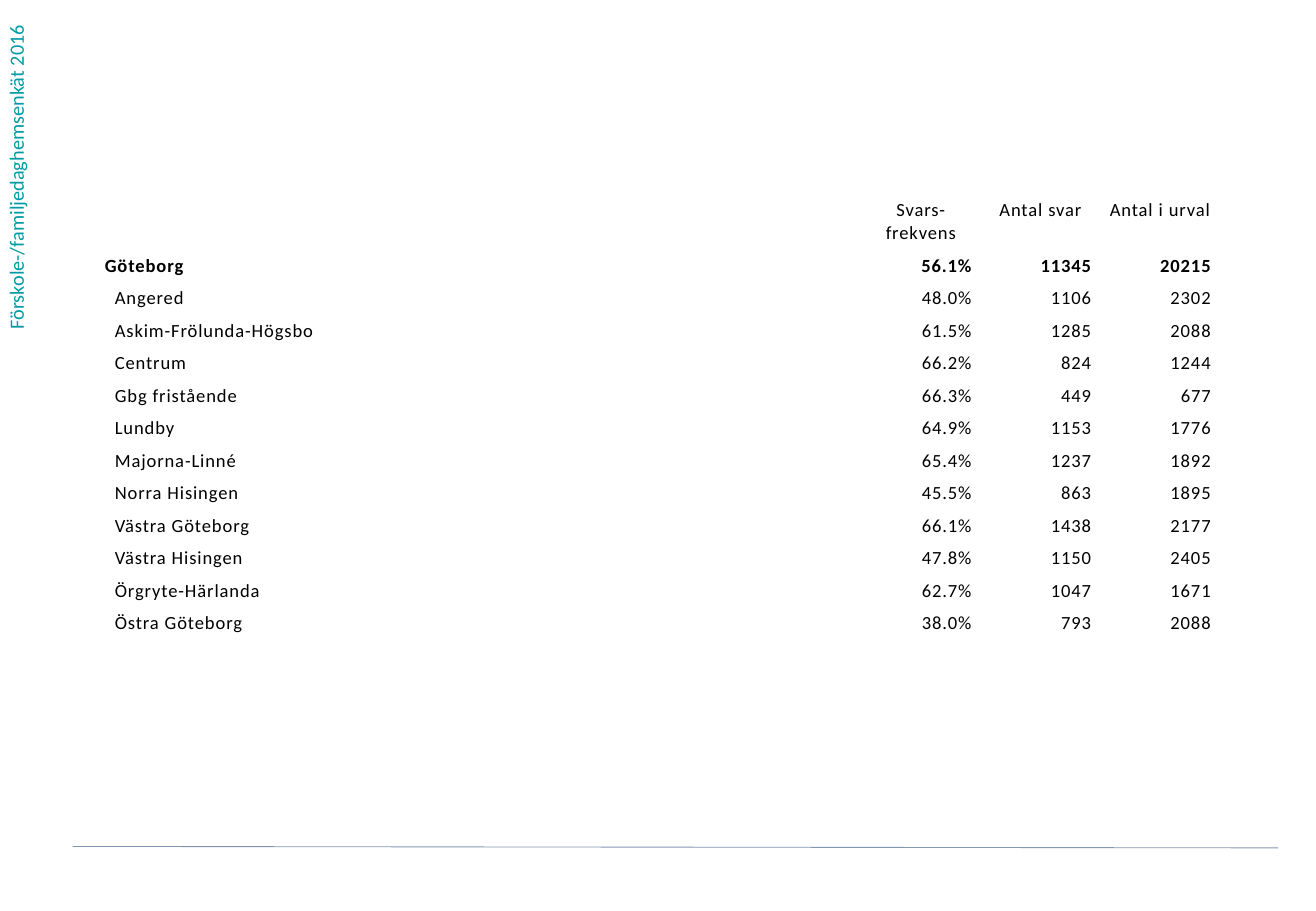
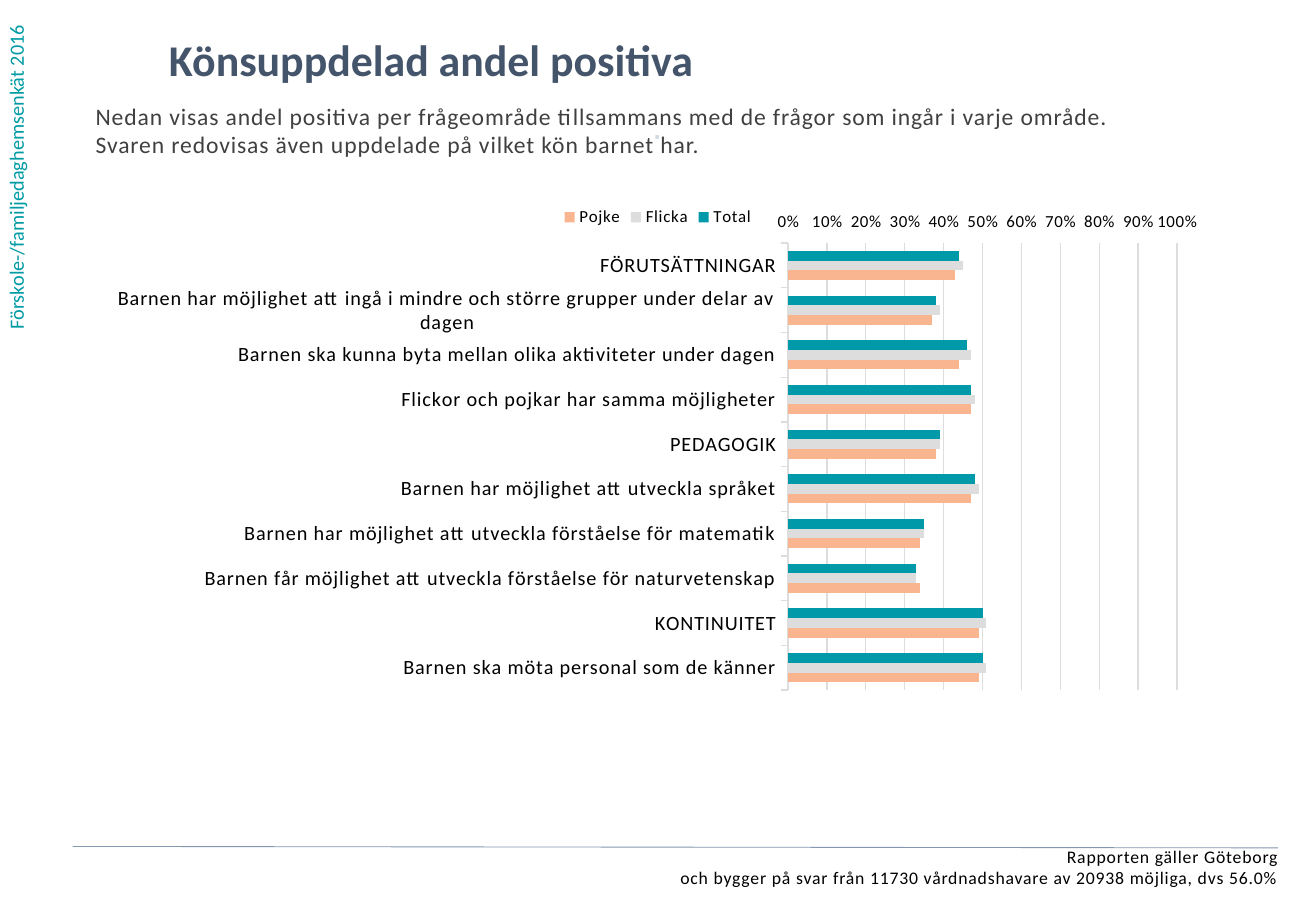
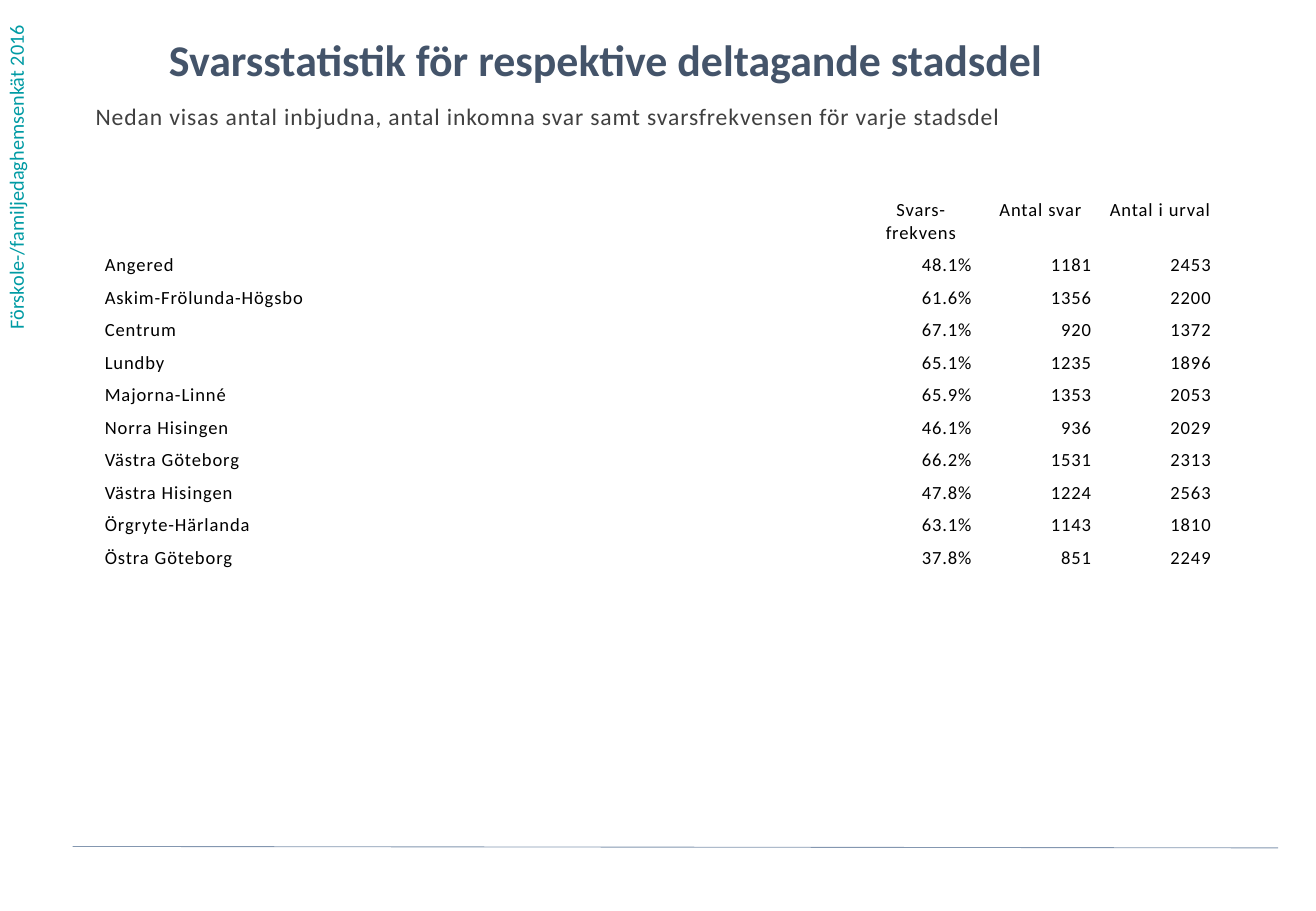
from lxml import etree
from pptx import Presentation
from pptx.chart.data import CategoryChartData
from pptx.dml.color import RGBColor
from pptx.enum.chart import XL_AXIS_CROSSES, XL_CHART_TYPE, XL_LEGEND_POSITION, XL_TICK_MARK
from pptx.enum.shapes import MSO_CONNECTOR
from pptx.enum.text import MSO_ANCHOR, PP_ALIGN
from pptx.oxml import parse_xml
from pptx.oxml.ns import nsdecls, qn
from pptx.util import Cm, Pt

LEFT, CENTER, RIGHT = PP_ALIGN.LEFT, PP_ALIGN.CENTER, PP_ALIGN.RIGHT
TOP, MIDDLE = MSO_ANCHOR.TOP, MSO_ANCHOR.MIDDLE
STRAIGHT = MSO_CONNECTOR.STRAIGHT
BAR_CLUSTERED = XL_CHART_TYPE.BAR_CLUSTERED
LEGEND_TOP = XL_LEGEND_POSITION.TOP
CROSS_MAXIMUM = XL_AXIS_CROSSES.MAXIMUM
TICK_OUTSIDE = XL_TICK_MARK.OUTSIDE

FONT = "Calibri"
BLACK = RGBColor(0x00, 0x00, 0x00)
WHITE = RGBColor(0xFF, 0xFF, 0xFF)
SLATE = RGBColor(0x44, 0x54, 0x6A)
DARK_GREY = RGBColor(0x40, 0x40, 0x40)
LIGHT_GREY = RGBColor(0xDD, 0xDD, 0xDD)
PALE_BLUE = RGBColor(0xD2, 0xD9, 0xE2)
RULE_BLUE = RGBColor(0x84, 0x97, 0xB0)
SIDE_TEAL = RGBColor(0x00, 0x9B, 0xA4)
TEAL = RGBColor(0x00, 0x99, 0xAA)
PEACH = RGBColor(0xF9, 0xB5, 0x90)

SPACING = "50"
BODY_LEFT, BODY_TOP, BODY_WIDTH = Cm(2), Cm(4.06), Cm(23.5)
NAME_WIDTH, FIGURE_WIDTH = Cm(16), Cm(2.5)
HEADER_HEIGHT, ROW_HEIGHT = Cm(1.15), Cm(0.68)

SURVEY = "Förskole-/familjedaghemsenkät 2016"
TABLE_HEADER = ("", "Svars-\nfrekvens", "Antal svar", "Antal i urval")

CITY_TOTAL = ("Göteborg", "56.1%", 11345, 20215)
CITY_DISTRICTS = [
    ("Angered", "48.0%", 1106, 2302),
    ("Askim-Frölunda-Högsbo", "61.5%", 1285, 2088),
    ("Centrum", "66.2%", 824, 1244),
    ("Gbg fristående", "66.3%", 449, 677),
    ("Lundby", "64.9%", 1153, 1776),
    ("Majorna-Linné", "65.4%", 1237, 1892),
    ("Norra Hisingen", "45.5%", 863, 1895),
    ("Västra Göteborg", "66.1%", 1438, 2177),
    ("Västra Hisingen", "47.8%", 1150, 2405),
    ("Örgryte-Härlanda", "62.7%", 1047, 1671),
    ("Östra Göteborg", "38.0%", 793, 2088),
]

GENDER_TITLE = "Könsuppdelad andel positiva"
GENDER_INTRO = (
    "Nedan visas andel positiva per frågeområde tillsammans med de frågor som ingår i varje område.\n"
    "Svaren redovisas även uppdelade på vilket kön barnet har."
)
GENDER_BASIS = (
    "Rapporten gäller Göteborg\n"
    "och bygger på svar från 11730 vårdnadshavare av 20938 möjliga, dvs 56.0%"
)
SERIES = [("Total", TEAL), ("Flicka", LIGHT_GREY), ("Pojke", PEACH)]
QUESTIONS = [
    ("FÖRUTSÄTTNINGAR", 0.44, 0.45, 0.43),
    ("Barnen har möjlighet att ingå i mindre och större grupper under delar av dagen", 0.38, 0.39, 0.37),
    ("Barnen ska kunna byta mellan olika aktiviteter under dagen", 0.46, 0.47, 0.44),
    ("Flickor och pojkar har samma möjligheter", 0.47, 0.48, 0.47),
    ("PEDAGOGIK", 0.39, 0.39, 0.38),
    ("Barnen har möjlighet att utveckla språket", 0.48, 0.49, 0.47),
    ("Barnen har möjlighet att utveckla förståelse för matematik", 0.35, 0.35, 0.34),
    ("Barnen får möjlighet att utveckla förståelse för naturvetenskap", 0.33, 0.33, 0.34),
    ("KONTINUITET", 0.5, 0.51, 0.49),
    ("Barnen ska möta personal som de känner", 0.5, 0.51, 0.49),
]
PLOT_AREA = {"x": 0.616, "y": 0.091, "w": 0.346, "h": 0.831}

DISTRICT_TITLE = "Svarsstatistik för respektive deltagande stadsdel"
DISTRICT_INTRO = "Nedan visas antal inbjudna, antal inkomna svar samt svarsfrekvensen för varje stadsdel"
DISTRICTS = [
    ("Angered", "48.1%", 1181, 2453),
    ("Askim-Frölunda-Högsbo", "61.6%", 1356, 2200),
    ("Centrum", "67.1%", 920, 1372),
    ("Lundby", "65.1%", 1235, 1896),
    ("Majorna-Linné", "65.9%", 1353, 2053),
    ("Norra Hisingen", "46.1%", 936, 2029),
    ("Västra Göteborg", "66.2%", 1531, 2313),
    ("Västra Hisingen", "47.8%", 1224, 2563),
    ("Örgryte-Härlanda", "63.1%", 1143, 1810),
    ("Östra Göteborg", "37.8%", 851, 2249),
]


def style_font(font, size, color, bold=False):
    font.name, font.size, font.bold = FONT, Pt(size), bold
    font.color.rgb = color


def write(frame, text, size, color, bold=False, align=LEFT, spaced=True):
    frame.text = text
    for paragraph in frame.paragraphs:
        paragraph.alignment = align
        for run in paragraph.runs:
            style_font(run.font, size, color, bold)
            if spaced:
                run.font._element.set("spc", SPACING)


def clear_margins(frame):
    frame.margin_left = frame.margin_top = frame.margin_right = frame.margin_bottom = 0
    frame.word_wrap = True
    frame.vertical_anchor = TOP


def add_text(slide, box, text, size, color, **style):
    frame = slide.shapes.add_textbox(*box).text_frame
    clear_margins(frame)
    write(frame, text, size, color, **style)


def add_page(deck, title=None, intro=None):
    slide = deck.slides.add_slide(deck.slide_layouts[5 if title else 6])
    side = slide.shapes.add_textbox(Cm(-0.05), 0, Cm(1.02), Cm(7.14)).text_frame
    side.word_wrap = True
    side._txBody.bodyPr.set("vert", "vert270")
    write(side, SURVEY, 12, SIDE_TEAL, spaced=False)

    rule = slide.shapes.add_connector(STRAIGHT, Cm(1.52), Cm(17.7), Cm(26.72), Cm(17.73))
    rule.line.color.rgb, rule.line.width = RULE_BLUE, Pt(0.5)
    etree.SubElement(rule._element.spPr, qn("a:effectLst"))

    if title:
        heading = slide.shapes.title
        heading.left, heading.top, heading.width, heading.height = Cm(3.53), Cm(0.69), Cm(21.18), Cm(1.45)
        clear_margins(heading.text_frame)
        write(heading.text_frame, title, 26, SLATE, bold=True, spaced=False)
        add_text(slide, (BODY_LEFT, Cm(2.13), Cm(24.03), Cm(2.57)), intro, 14, DARK_GREY)
    return slide


def add_response_table(slide, districts, total=None):
    rows = [TABLE_HEADER] + ([total] if total else []) + districts
    height = HEADER_HEIGHT + ROW_HEIGHT * (len(rows) - 1)
    table = slide.shapes.add_table(
        len(rows), len(TABLE_HEADER), BODY_LEFT, BODY_TOP, BODY_WIDTH, height
    ).table
    table.first_row = table.horz_banding = False
    for c, column in enumerate(table.columns):
        column.width = FIGURE_WIDTH if c else NAME_WIDTH
    for r, values in enumerate(rows):
        table.rows[r].height = ROW_HEIGHT if r else HEADER_HEIGHT
        for c, value in enumerate(values):
            cell = table.cell(r, c)
            cell.fill.solid()
            cell.fill.fore_color.rgb = WHITE
            indented = total and r > 1 and c == 0
            cell.margin_left = Cm(0.4) if indented else Cm(0.19)
            cell.margin_right = Cm(0.19)
            cell.margin_top = cell.margin_bottom = Cm(0.1)
            cell.vertical_anchor = MIDDLE if r else TOP
            align = CENTER if r == 0 else RIGHT if c else LEFT
            write(cell.text_frame, str(value), 11, BLACK, bold=values is total, align=align)


def add_gender_chart(slide):
    data = CategoryChartData(number_format="0%")
    names, *shares = zip(*QUESTIONS)
    data.categories = names
    for (label, _), values in zip(SERIES, shares):
        data.add_series(label, values)
    chart = slide.shapes.add_chart(BAR_CLUSTERED, BODY_LEFT, BODY_TOP, BODY_WIDTH, Cm(11.25), data).chart
    chart.has_title = False
    style_font(chart.font, 10, BLACK)

    chart.has_legend = True
    chart.legend.position = LEGEND_TOP
    chart.legend.include_in_layout = False
    style_font(chart.legend.font, 10, BLACK)

    plot = chart.plots[0]
    plot.gap_width, plot.overlap, plot.vary_by_categories = 162, 0, False
    for series, (_, color) in zip(plot.series, SERIES):
        series.format.fill.solid()
        series.format.fill.fore_color.rgb = color

    questions = chart.category_axis
    questions.reverse_order = True
    questions.crosses = CROSS_MAXIMUM
    share = chart.value_axis
    share.minimum_scale, share.maximum_scale, share.major_unit = 0, 1, 0.1
    share.has_major_gridlines = True
    share.tick_labels.number_format = "0%;0%"
    share.tick_labels.number_format_is_linked = False
    share.format.line.fill.background()
    for axis, size in ((questions, 12), (share, 10)):
        axis.major_tick_mark = TICK_OUTSIDE
        style_font(axis.tick_labels.font, size, BLACK)
    for line in (questions.format.line, share.major_gridlines.format.line):
        line.color.rgb, line.width = LIGHT_GREY, Pt(0.75)

    for properties in chart.element.iter(qn("a:defRPr")):
        properties.set("spc", SPACING)
    area = chart.element.find(".//" + qn("c:plotArea"))
    for layout in area.findall(qn("c:layout")):
        area.remove(layout)
    modes = "".join(f'<c:{edge}Mode val="edge"/>' for edge in "xy")
    sizes = "".join(f'<c:{side} val="{value}"/>' for side, value in PLOT_AREA.items())
    area.insert(0, parse_xml(
        f'<c:layout {nsdecls("c")}><c:manualLayout><c:layoutTarget val="inner"/>'
        f"{modes}{sizes}</c:manualLayout></c:layout>"
    ))


def main():
    deck = Presentation()
    deck.slide_width, deck.slide_height = Cm(27.51), Cm(19.05)

    add_response_table(add_page(deck), CITY_DISTRICTS, CITY_TOTAL)

    gender = add_page(deck, GENDER_TITLE, GENDER_INTRO)
    add_text(gender, (Cm(0.3), Cm(17.68), Cm(26.42), Cm(1.09)), GENDER_BASIS, 10.5, BLACK, align=RIGHT)
    add_text(gender, (Cm(9.83), Cm(2.59), Cm(7.82), Cm(0.99)), "⋅", 12, PALE_BLUE, bold=True, align=CENTER)
    add_gender_chart(gender)

    add_response_table(add_page(deck, DISTRICT_TITLE, DISTRICT_INTRO), DISTRICTS)

    deck.save("out.pptx")


if __name__ == "__main__":
    main()
